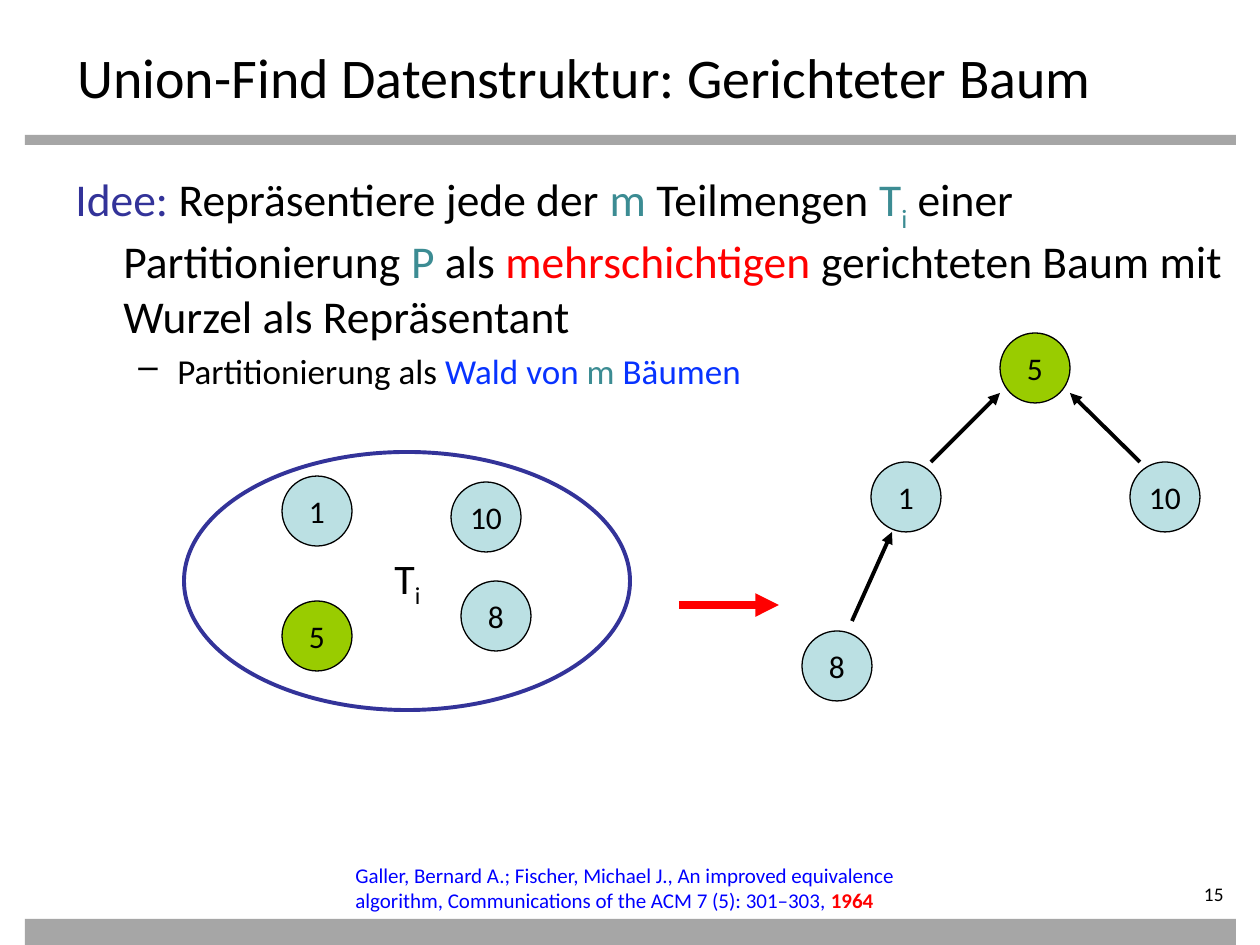
from typing import NamedTuple

from lxml import etree
from pptx import Presentation
from pptx.dml.color import RGBColor
from pptx.enum.shapes import MSO_CONNECTOR, MSO_SHAPE
from pptx.enum.text import MSO_ANCHOR, PP_ALIGN
from pptx.oxml.ns import qn
from pptx.util import Emu, Pt

RECTANGLE, OVAL = MSO_SHAPE.RECTANGLE, MSO_SHAPE.OVAL
STRAIGHT = MSO_CONNECTOR.STRAIGHT
MIDDLE = MSO_ANCHOR.MIDDLE
LEFT, CENTER, RIGHT = PP_ALIGN.LEFT, PP_ALIGN.CENTER, PP_ALIGN.RIGHT

PX_PER_INCH = 126
FONT = "Calibri"
NODE_SIZE = 70
COLORS = {
    "black": "000000",
    "bar": "A6A6A6",
    "indigo": "333399",
    "teal": "3C8C93",
    "red": "FF0000",
    "blue": "0833FF",
    "citation": "0000FF",
    "node": "BBE0E3",
    "root": "99CC00",
}


class Box(NamedTuple):
    x: int
    y: int
    width: int
    height: int


class Span(NamedTuple):
    text: str
    color: str = "black"
    bold: bool = False
    subscript: bool = False


class Node(NamedTuple):
    label: str
    x: int
    y: int
    color: str = "node"


class Arrow(NamedTuple):
    start: tuple[int, int]
    end: tuple[int, int]
    color: str = "black"
    weight: float = 2.25


BARS = [Box(25, 135, 1211, 10), Box(25, 919, 1211, 26)]
SUBSET_OUTLINE = Box(184, 452, 446, 258)
NODES = [
    Node("1", 282, 476),
    Node("10", 451, 482),
    Node("8", 461, 581),
    Node("5", 282, 601, "root"),
    Node("5", 1000, 333, "root"),
    Node("1", 871, 462),
    Node("10", 1130, 462),
    Node("8", 802, 631),
]
ARROWS = [
    Arrow((679, 605), (779, 605), "red", 4.5),
    Arrow((931, 462), (1000, 393)),
    Arrow((1140, 462), (1070, 393)),
    Arrow((852, 621), (892, 532)),
]
IDEA = [
    Span("Idee:", "indigo"),
    Span(" Repräsentiere jede der "),
    Span("m", "teal"),
    Span(" Teilmengen "),
    Span("T", "teal"),
    Span("i", "teal", subscript=True),
    Span(" einer Partitionierung "),
    Span("P", "teal"),
    Span(" als "),
    Span("mehrschichtigen", "red"),
    Span(" gerichteten Baum mit Wurzel als Repräsentant"),
]
FOREST = [
    Span("Partitionierung als "),
    Span("Wald von ", "blue"),
    Span("m ", "teal"),
    Span("Bäumen", "blue"),
]
CITATION = [
    Span("Galler, Bernard A.; Fischer, Michael J., An improved equivalence "
         "algorithm, Communications of the ACM 7 (5): 301–303, ", "citation"),
    Span("1964", "red", bold=True),
]


def px(length: int) -> Emu:
    return Emu(round(length * 914400 / PX_PER_INCH))


def rgb(name: str) -> RGBColor:
    return RGBColor.from_string(COLORS[name])


def write(paragraph, spans: list[Span], size: int, align=LEFT) -> None:
    paragraph.alignment = align
    for span in spans:
        run = paragraph.add_run()
        run.text = span.text
        run.font.name = FONT
        run.font.size = Pt(size)
        run.font.bold = span.bold
        run.font.color.rgb = rgb(span.color)
        if span.subscript:
            run._r.get_or_add_rPr().set("baseline", "-25000")


def indent(paragraph, margin: int, hanging: int, bullet: str = "") -> None:
    properties = paragraph._p.get_or_add_pPr()
    properties.set("marL", str(px(margin)))
    properties.set("indent", str(-px(hanging)))
    if bullet:
        etree.SubElement(properties, qn("a:buChar"), char=bullet)


def add_text(slide, box: Box, spans: list[Span], size: int, align=LEFT, wrap: bool = True):
    frame = slide.shapes.add_textbox(*map(px, box)).text_frame
    frame.word_wrap = wrap
    write(frame.paragraphs[0], spans, size, align)
    return frame


def add_filled(slide, kind, box: Box, color: str):
    shape = slide.shapes.add_shape(kind, *map(px, box))
    shape.shadow.inherit = False
    shape.fill.solid()
    shape.fill.fore_color.rgb = rgb(color)
    shape.line.fill.background()
    return shape


def add_node(slide, node: Node) -> None:
    circle = add_filled(slide, OVAL, Box(node.x, node.y, NODE_SIZE, NODE_SIZE), node.color)
    circle.line.color.rgb = rgb("black")
    circle.line.width = Pt(0.75)
    frame = circle.text_frame
    frame.word_wrap = False
    frame.vertical_anchor = MIDDLE
    write(frame.paragraphs[0], [Span(node.label)], 18, CENTER)


def add_arrow(slide, arrow: Arrow) -> None:
    connector = slide.shapes.add_connector(STRAIGHT, *map(px, arrow.start + arrow.end))
    connector.line.color.rgb = rgb(arrow.color)
    connector.line.width = Pt(arrow.weight)
    etree.SubElement(connector.line._get_or_add_ln(), qn("a:tailEnd"), type="triangle")
    etree.SubElement(connector._element.spPr, qn("a:effectLst"))


def main() -> None:
    deck = Presentation()
    deck.slide_width, deck.slide_height = px(1260), px(945)
    slide = deck.slides.add_slide(deck.slide_layouts[6])

    for bar in BARS:
        add_filled(slide, RECTANGLE, bar, "bar")

    page_number = add_text(slide, Box(1097, 882, 139, 28), [Span("15")], 11, RIGHT)
    page_number.margin_left = page_number.margin_top = page_number.margin_bottom = 0
    add_text(slide, Box(65, 36, 1134, 69),
             [Span("Union-Find Datenstruktur: Gerichteter Baum")], 32)

    body = add_text(slide, Box(63, 165, 1174, 684), IDEA, 26)
    indent(body.paragraphs[0], 48, 48)
    forest = body.add_paragraph()
    forest.space_before = Pt(4)
    indent(forest, 102, 39, "–")
    write(forest, FOREST, 20)

    add_text(slide, Box(343, 856, 630, 63), CITATION, 12)

    outline = add_filled(slide, OVAL, SUBSET_OUTLINE, "node")
    outline.fill.background()
    outline.line.color.rgb = rgb("indigo")
    outline.line.width = Pt(2.25)
    add_text(slide, Box(382, 546, 53, 63), [Span("T"), Span("i", subscript=True)], 24, wrap=False)

    for node in NODES:
        add_node(slide, node)
    for arrow in ARROWS:
        add_arrow(slide, arrow)

    deck.save("out.pptx")


if __name__ == "__main__":
    main()
